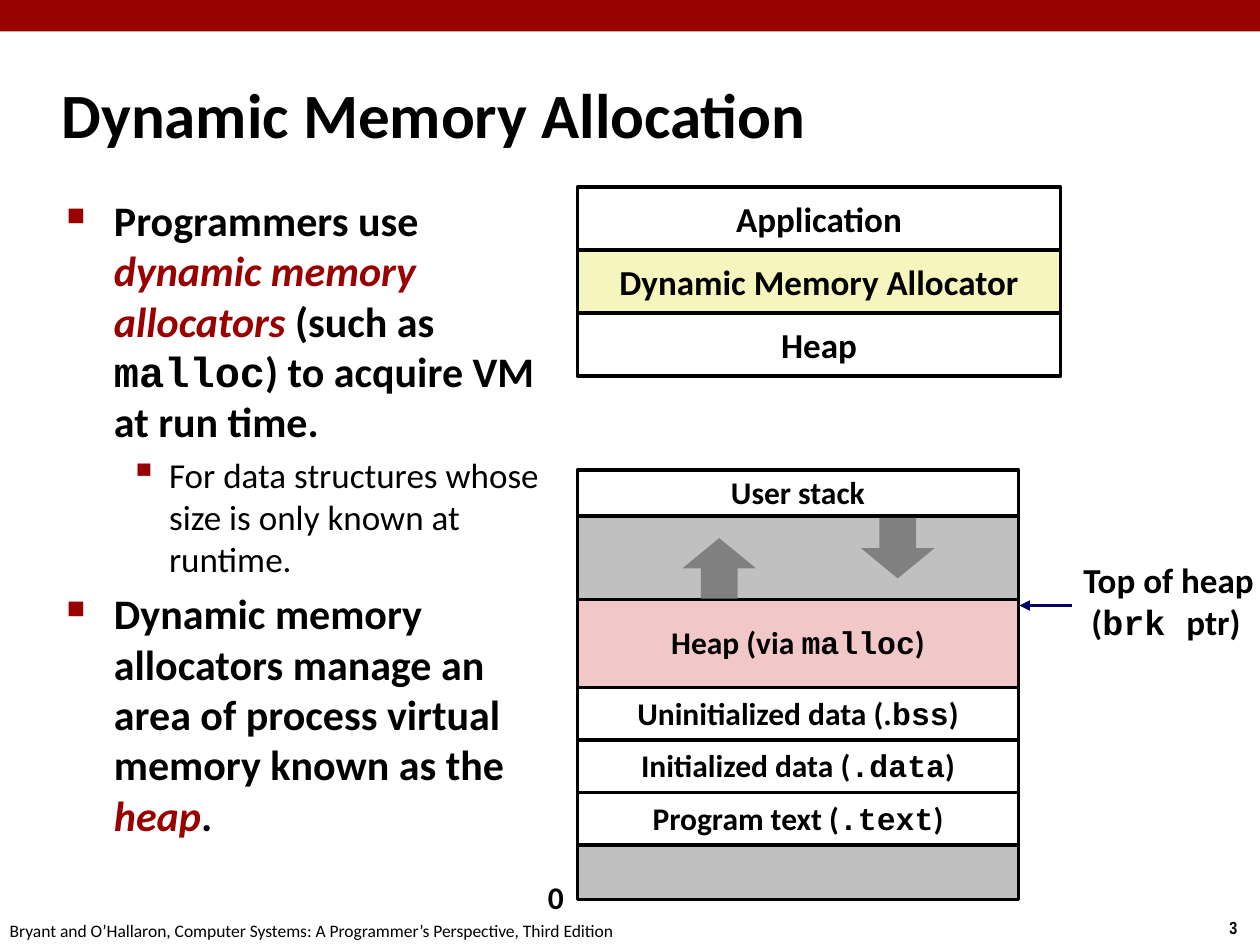
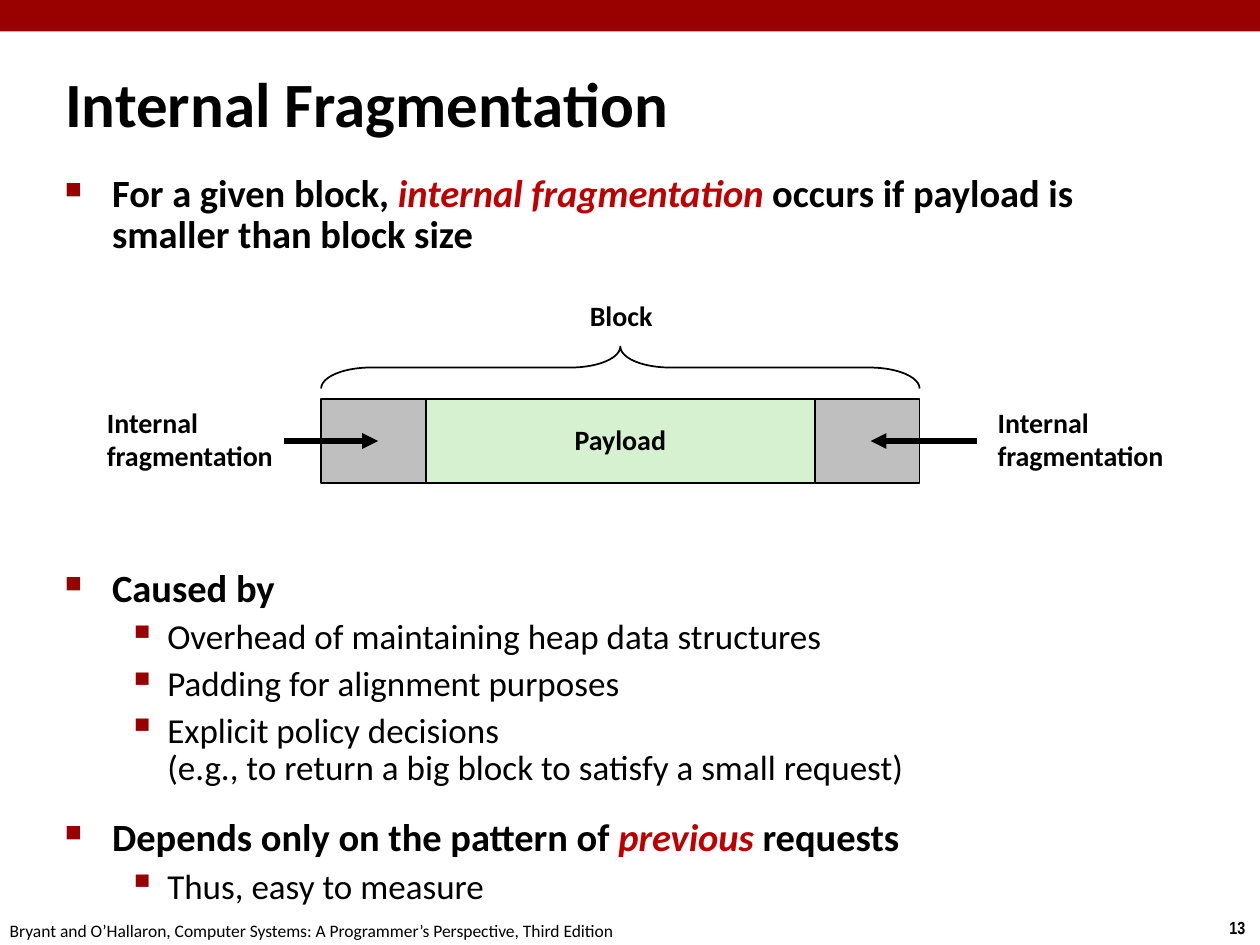
from itertools import accumulate

from lxml.etree import SubElement
from pptx import Presentation
from pptx.dml.color import RGBColor
from pptx.enum.shapes import MSO_CONNECTOR as Connector, MSO_SHAPE as Shape
from pptx.enum.text import MSO_ANCHOR as Anchor, MSO_AUTO_SIZE as AutoSize, PP_ALIGN as Align
from pptx.oxml.ns import qn
from pptx.util import Pt

BLACK = RGBColor(0x00, 0x00, 0x00)
WHITE = RGBColor(0xFF, 0xFF, 0xFF)
DARK_RED = RGBColor(0x99, 0x00, 0x00)
RED = RGBColor(0xC0, 0x00, 0x00)
NAVY = RGBColor(0x00, 0x00, 0x66)
SILVER = RGBColor(0xC0, 0xC0, 0xC0)
LIGHT_GRAY = RGBColor(0xBF, 0xBF, 0xBF)
GRAY = RGBColor(0x80, 0x80, 0x80)
PINK = RGBColor(0xF1, 0xC7, 0xC7)
YELLOW = RGBColor(0xF6, 0xF5, 0xBD)
GREEN = RGBColor(0xD5, 0xF1, 0xCF)

FOOTER = "Bryant and O’Hallaron, Computer Systems: A Programmer’s Perspective, Third Edition"
CODE = {"name": "Courier New"}
TERM = {"color": DARK_RED, "italic": True}
BRIGHT_TERM = {"color": RED, "italic": True}

LEVELS = (
    {"bullet": "■", "percent": 60, "margin": 27, "indent": -27, "bold": True},
    {"bullet": "▪", "percent": 110, "margin": 58.5, "indent": -22.5, "bold": False},
)


class Deck:
    font = {"name": "Calibri", "size": 18, "bold": True, "italic": False, "color": BLACK}

    def __init__(self):
        self.presentation = Presentation()
        self.presentation.slide_width = Pt(720)
        self.presentation.slide_height = Pt(540)
        self.slide = None

    def add_slide(self, title, number, box):
        self.slide = self.presentation.slides.add_slide(self.presentation.slide_layouts[5])
        self.box(Shape.RECTANGLE, (0, 0, 720, 18), DARK_RED)
        self.text((695.5, 520.5, 24.5, 19.5), [number], name="Arial Narrow", size=10)
        self.text((-1.5, 522, 366, 19.5), [FOOTER], size=10, bold=False)
        shape = self.slide.shapes.title
        shape.left, shape.top, shape.width, shape.height = map(Pt, box)
        self.frame(shape, Anchor.MIDDLE, True)
        self.fill_paragraph(shape.text_frame.paragraphs[0], title,
                            {"alignment": Align.LEFT}, size=36)

    def frame(self, shape, anchor, wrap):
        values = {"auto_size": AutoSize.NONE, "vertical_anchor": anchor, "word_wrap": wrap}
        for name, value in values.items():
            setattr(shape.text_frame, name, value)

    def fill_paragraph(self, paragraph, content, layout, **style):
        for name, value in layout.items():
            setattr(paragraph, name, value)
        for piece in [content] if isinstance(content, str) else content:
            text, changes = (piece, {}) if isinstance(piece, str) else piece
            values = {**self.font, **style, **changes}
            color = values.pop("color")
            values["size"] = Pt(values["size"])
            for index, line in enumerate(text.split("\n")):
                if index:
                    paragraph.add_line_break()
                run = paragraph.add_run()
                run.text = line
                run.font.color.rgb = color
                for name, value in values.items():
                    setattr(run.font, name, value)

    def paragraphs(self, shape, count):
        frame = shape.text_frame
        return [frame.add_paragraph() if index else frame.paragraphs[0]
                for index in range(count)]

    def lines(self, shape, contents, layout, **style):
        for paragraph, content in zip(self.paragraphs(shape, len(contents)), contents):
            self.fill_paragraph(paragraph, content, layout, **style)

    def text(self, box, contents, spacing=1.0, **style):
        shape = self.slide.shapes.add_textbox(*map(Pt, box))
        self.frame(shape, Anchor.TOP, False)
        self.lines(shape, contents, {"line_spacing": spacing}, **style)

    def bullets(self, box, items, sizes, spacing):
        shape = self.slide.shapes.add_textbox(*map(Pt, box))
        self.frame(shape, Anchor.TOP, True)
        for paragraph, item in zip(self.paragraphs(shape, len(items)), items):
            level, before, content = item
            look = LEVELS[level]
            layout = {"level": level, "line_spacing": spacing, "space_before": Pt(before)}
            self.fill_paragraph(paragraph, content, layout,
                                size=sizes[level], bold=look["bold"])
            properties = paragraph._p.get_or_add_pPr()
            properties.set("marL", str(Pt(look["margin"])))
            properties.set("indent", str(Pt(look["indent"])))
            color = SubElement(properties, qn("a:buClr"))
            SubElement(color, qn("a:srgbClr"), val=str(DARK_RED))
            SubElement(properties, qn("a:buSzPct"), val=str(look["percent"] * 1000))
            SubElement(properties, qn("a:buChar"), char=look["bullet"])

    def box(self, kind, box, fill=None, border=0, content=None, spacing=1.0, **style):
        shape = self.slide.shapes.add_shape(kind, *map(Pt, box))
        shape.shadow.inherit = False
        if fill is None:
            shape.fill.background()
        else:
            shape.fill.solid()
            shape.fill.fore_color.rgb = fill
        if border:
            shape.line.color.rgb = BLACK
            shape.line.width = Pt(border)
        else:
            shape.line.fill.background()
        if content:
            self.frame(shape, Anchor.MIDDLE, False)
            layout = {"alignment": Align.CENTER, "line_spacing": spacing}
            self.lines(shape, [content], layout, **style)
        return shape

    def arrow(self, start, end, y, color, width):
        connector = self.slide.shapes.add_connector(
            Connector.STRAIGHT, Pt(start), Pt(y), Pt(end), Pt(y))
        connector.line.color.rgb = color
        connector.line.width = Pt(width)
        SubElement(connector.line._get_or_add_ln(), qn("a:tailEnd"), type="triangle")
        SubElement(connector._element.spPr, qn("a:effectLst"))


def add_allocation_slide(deck):
    deck.add_slide("Dynamic Memory Allocation", "3", (28, 34.5, 598, 60))
    deck.bullets((31, 107.5, 298, 392), [
        (0, 4.8, ["Programmers use ", ("dynamic memory allocators ", TERM), "(such as ",
                  ("malloc", CODE), ") to acquire VM at run time."]),
        (1, 4, "For data structures whose size is only known at runtime."),
        (0, 4.8, ["Dynamic memory allocators manage an area of process virtual memory "
                  "known as the ", ("heap", TERM), "."]),
    ], (24, 20), 1.0)

    left = 330
    segments = [
        (26.5, WHITE, "User stack"),
        (47.5, SILVER, None),
        (50.5, PINK, ["Heap (via ", ("malloc", CODE), ")"]),
        (30, WHITE, ["Uninitialized data (.", ("bss", CODE), ")"]),
        (30, WHITE, ["Initialized data (", (".data", CODE), ")"]),
        (30, WHITE, ["Program text (", (".text", CODE), ")"]),
        (31, SILVER, None),
    ]
    tops = accumulate((height for height, _, _ in segments), initial=268.5)
    for top, (height, fill, label) in zip(tops, segments):
        deck.box(Shape.RECTANGLE, (left, top, 252, height), fill, 2, label, 0.98)
    deck.text((306, 499, 24, 29), ["0"], 0.98)
    deck.text((612, 317, 112.5, 54.5),
              ["Top of heap", [" (", ("brk ", CODE), "ptr)"]], 0.98, size=20)
    deck.arrow(612.5, 582.5, 346, NAVY, 2)
    deck.box(Shape.DOWN_ARROW, (492, 296, 42, 34.5), GRAY)
    deck.box(Shape.UP_ARROW, (390, 307.5, 42, 34.5), GRAY)

    layers = [("Application", WHITE), ("Dynamic Memory Allocator", YELLOW), ("Heap", WHITE)]
    for index, (label, fill) in enumerate(layers):
        deck.box(Shape.RECTANGLE, (left, 107 + 36 * index, 276, 36), fill, 2, label, size=20)


def add_fragmentation_slide(deck):
    deck.add_slide("Internal Fragmentation", "13", (30, 36, 530, 45.5))
    deck.bullets((30, 96.5, 654.5, 425.5), [
        (0, 5.6, ["For a given block, ", ("internal fragmentation ", BRIGHT_TERM),
                  "occurs if payload is smaller than block size"]),
        (0, 179, "Caused by"),
        (1, 5.6, "Overhead of maintaining heap data structures"),
        (1, 5.6, "Padding for alignment purposes"),
        (1, 5.6, "Explicit policy decisions \n"
                 "(e.g., to return a big block to satisfy a small request)"),
        (0, 18, ["Depends only on the pattern of ", ("previous", BRIGHT_TERM), " requests"]),
        (1, 5.6, "Thus, easy to measure"),
    ], (22, 20), 0.88)

    left, top, padding, payload, height = 183.5, 228, 60, 222, 48
    block = payload + 2 * padding
    deck.box(Shape.RECTANGLE, (left + padding, top, payload, height), GREEN, 1,
             "Payload", 0.98, size=16)
    for padding_left in (left, left + padding + payload):
        deck.box(Shape.RECTANGLE, (padding_left, top, padding, height), LIGHT_GRAY, 1)

    depth, center_y = 24, 210
    brace = deck.box(Shape.RIGHT_BRACE, (left + block / 2 - depth / 2, center_y - block / 2,
                                         depth, block), border=1)
    brace.rotation = 270
    brace.adjustments[0] = 1.19
    deck.text((330, 168, 50, 26.5), ["Block"], 0.98, size=16)

    for label_left, start, end in ((54, 162, 216), (563, 558, 497.5)):
        deck.text((label_left, 229, 110, 45.5), ["Internal", "fragmentation"], 0.98, size=16)
        deck.arrow(start, end, 252, BLACK, 3)


def main():
    deck = Deck()
    add_allocation_slide(deck)
    add_fragmentation_slide(deck)
    deck.presentation.save("out.pptx")


if __name__ == "__main__":
    main()
